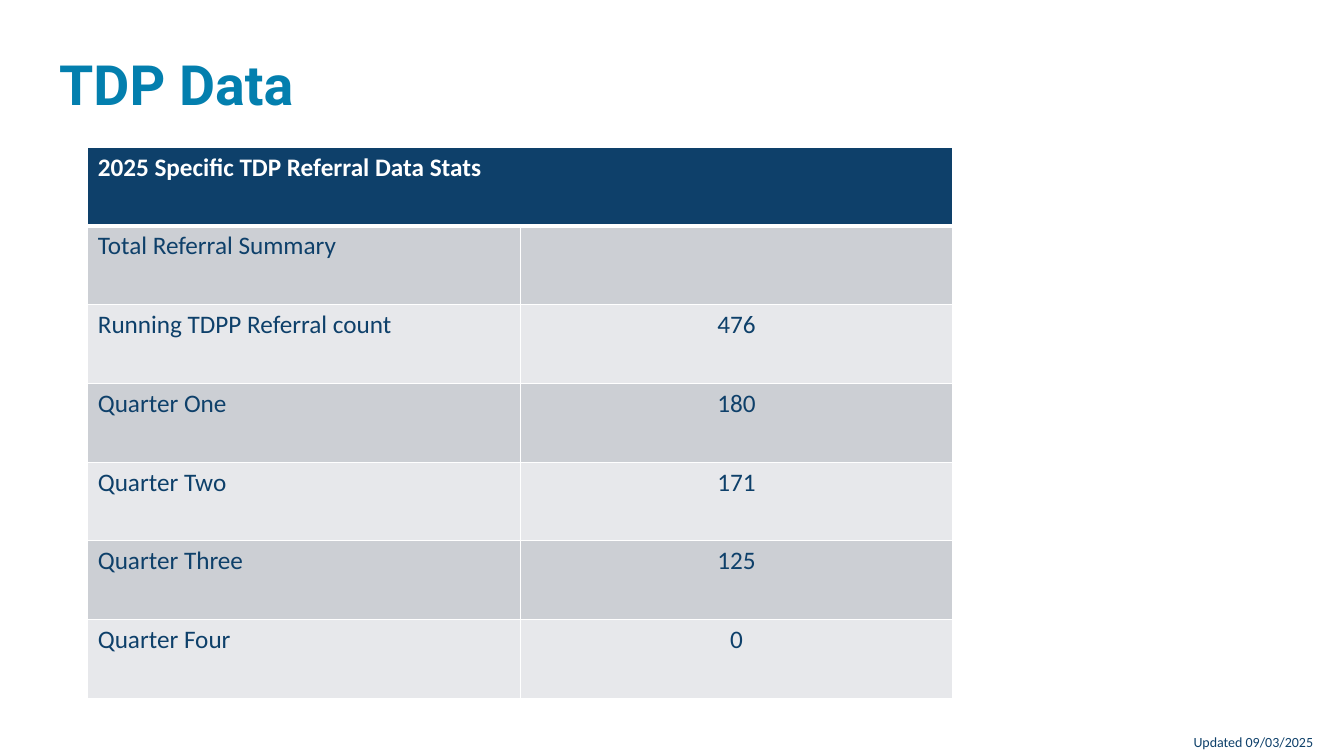
from dataclasses import dataclass

from lxml import etree
from pptx import Presentation
from pptx.dml.color import RGBColor
from pptx.enum.text import MSO_ANCHOR, PP_ALIGN
from pptx.oxml.ns import qn
from pptx.util import Emu, Inches, Pt

CENTER, LEFT = PP_ALIGN.CENTER, PP_ALIGN.LEFT
MIDDLE, TOP = MSO_ANCHOR.MIDDLE, MSO_ANCHOR.TOP
COLORS = {"title": "037FAE", "navy": "0E406A", "white": "FFFFFF",
          "odd": "CCCFD4", "even": "E7E8EB"}
WIDTH, HEIGHT = Inches(13.33), Inches(7.5)


@dataclass(frozen=True)
class Box:
    left: float
    top: float
    width: float
    height: float

    def emu(self) -> list[Emu]:
        return [Emu(round(share * side / 100)) for share, side in
                zip((self.left, self.top, self.width, self.height),
                    (WIDTH, HEIGHT, WIDTH, HEIGHT))]


@dataclass(frozen=True)
class Style:
    size: float
    color: str
    font: str = "Calibri"
    bold: bool = False
    align: PP_ALIGN = LEFT


@dataclass(frozen=True)
class Label:
    text: str
    box: Box
    style: Style
    anchor: MSO_ANCHOR = TOP
    wrap: bool = True
    line_spacing: float = 1.0


@dataclass(frozen=True)
class Stat:
    name: str
    value: str = ""


LABELS = [
    Label("TDP Data", Box(3.67, 7.6, 92.65, 8),
          Style(39.6, "title", "Roboto", True), MIDDLE, line_spacing=0.9),
    Label("Updated 09/03/2025", Box(88.07, 96.4, 10.58, 3.6),
          Style(10, "navy"), wrap=False),
]
TABLE_BOX = Box(6.53, 19.47, 64.37, 72.93)
STATS = [
    Stat("2025 Specific TDP Referral Data Stats"),
    Stat("Total Referral Summary"),
    Stat("Running TDPP Referral count", "476"),
    Stat("Quarter One", "180"),
    Stat("Quarter Two", "171"),
    Stat("Quarter Three", "125"),
    Stat("Quarter Four", "0"),
]


def rgb(name: str) -> RGBColor:
    return RGBColor.from_string(COLORS[name])


def write(tf, text: str, style: Style) -> None:
    tf.text = text
    p = tf.paragraphs[0]
    p.alignment = style.align
    for font in [p.font] + [r.font for r in p.runs]:
        font.name, font.size, font.bold = style.font, Pt(style.size), style.bold
        font.color.rgb = rgb(style.color)


def add_label(s, label: Label) -> None:
    tf = s.shapes.add_textbox(*label.box.emu()).text_frame
    write(tf, label.text, label.style)
    tf.word_wrap = label.wrap
    tf.vertical_anchor = label.anchor
    tf.paragraphs[0].line_spacing = label.line_spacing


def add_borders(cell, top: float, bottom: float) -> None:
    tc_pr = cell._tc.get_or_add_tcPr()
    for side, width in (("L", 1), ("R", 1), ("T", top), ("B", bottom)):
        ln = etree.SubElement(tc_pr, qn(f"a:ln{side}"), w=str(Pt(width)))
        fill = etree.SubElement(ln, qn("a:solidFill"))
        etree.SubElement(fill, qn("a:srgbClr"), val=COLORS["white"])


def add_stats(s, stats: list[Stat], box: Box) -> None:
    table = s.shapes.add_table(len(stats), 2, *box.emu()).table
    for i, stat in enumerate(stats):
        header = i == 0
        fill = "navy" if header else "odd" if i % 2 else "even"
        color = "white" if header else "navy"
        for j, text in enumerate((stat.name, stat.value)):
            cell = table.cell(i, j)
            align = CENTER if j else LEFT
            write(cell.text_frame, text, Style(18, color, bold=header, align=align))
            add_borders(cell, 3 if i == 1 else 1, 3 if header else 1)
            cell.fill.solid()
            cell.fill.fore_color.rgb = rgb(fill)
    table.cell(0, 0).merge(table.cell(0, 1))


def main() -> None:
    prs = Presentation()
    prs.slide_width, prs.slide_height = WIDTH, HEIGHT
    s = prs.slides.add_slide(prs.slide_layouts[6])
    for label in LABELS:
        add_label(s, label)
    add_stats(s, STATS, TABLE_BOX)
    prs.save("out.pptx")


if __name__ == "__main__":
    main()
